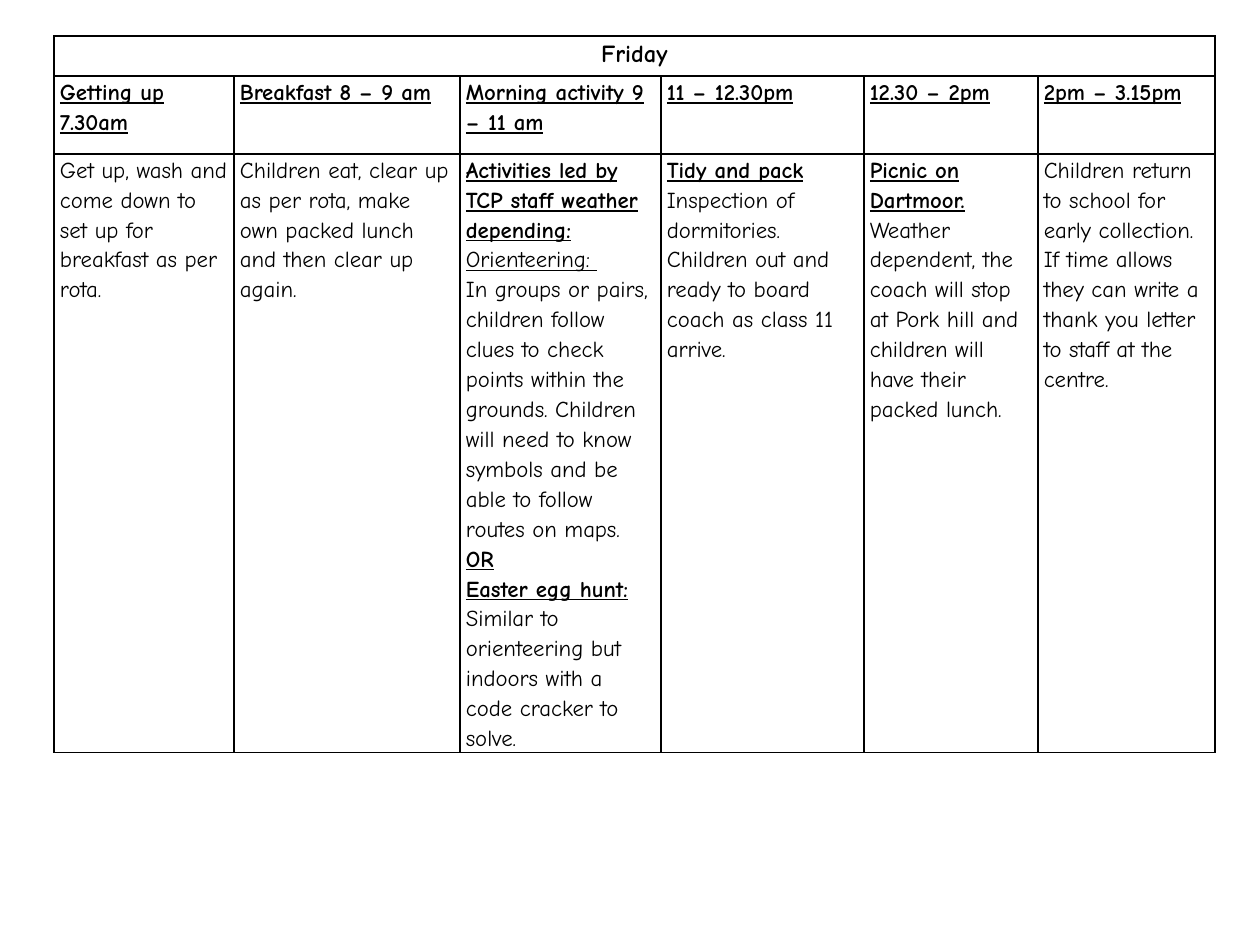
from dataclasses import dataclass

import lxml.etree
import pptx
import pptx.dml.color
import pptx.enum.text
import pptx.oxml.ns
import pptx.util

PX = 914400 / 126  # EMU per px


@dataclass(frozen=True)
class Theme:
    font: str = "Comic Neue"
    ink: str = "000000"
    paper: str = "FFFFFF"
    day_size: int = 14
    text_size: int = 13
    spacing: float = 1.15
    border: int = 12700


THEME = Theme()

# Paragraph styles: (bold, underline)
PLAIN, HEADING, LINED, DAY = (False, False), (True, True), (False, True), (True, False)

COLUMN_WIDTHS = [180, 226, 201, 203, 174, 177]
ROW_HEIGHTS = [40, 78, 594]

# One entry per column: time slot, then styled paragraphs
SCHEDULE = [
    ("Getting up 7.30am", [
        ("Get up, wash and come down to set up for breakfast as per rota.", PLAIN)]),
    ("Breakfast 8 – 9 am", [
        ("Children eat, clear up as per rota, make own packed lunch and then "
         "clear up again.", PLAIN)]),
    ("Morning activity 9 – 11 am", [
        ("Activities led by TCP staff weather depending:", HEADING),
        ("Orienteering: ", LINED),
        ("In groups or pairs, children follow clues to check points within the "
         "grounds. Children will need to know symbols and be able to follow "
         "routes on maps.", PLAIN),
        ("OR", HEADING),
        ("Easter egg hunt:", HEADING),
        ("Similar to orienteering but indoors with a code cracker to solve.", PLAIN)]),
    ("11 – 12.30pm", [
        ("Tidy and pack", HEADING),
        ("Inspection of dormitories.", PLAIN),
        ("Children out and ready to board coach as class 11 arrive.", PLAIN)]),
    ("12.30 – 2pm", [
        ("Picnic on Dartmoor.", HEADING),
        ("Weather dependent, the coach will stop at Pork hill and children will "
         "have their packed lunch.", PLAIN)]),
    ("2pm – 3.15pm", [
        ("Children return to school for early collection. If time allows they "
         "can write a thank you letter to staff at the centre.", PLAIN)]),
]


def px(n):
    return pptx.util.Emu(round(n * PX))


def color(value):
    return pptx.dml.color.RGBColor.from_string(value)


def set_borders(cell):
    tc_pr = cell._tc.get_or_add_tcPr()
    qn = pptx.oxml.ns.qn
    for side in ("a:lnL", "a:lnR", "a:lnT", "a:lnB"):
        ln = lxml.etree.SubElement(tc_pr, qn(side), w=str(THEME.border))
        fill = lxml.etree.SubElement(ln, qn("a:solidFill"))
        lxml.etree.SubElement(fill, qn("a:srgbClr"), val=THEME.ink)


def format_cell(cell):
    set_borders(cell)
    cell.fill.solid()
    cell.fill.fore_color.rgb = color(THEME.paper)
    cell.margin_left = cell.margin_right = px(6)
    cell.margin_top = cell.margin_bottom = 0


def write_cell(cell, paragraphs, size=THEME.text_size, align=None):
    tf = cell.text_frame
    for i, (text, (bold, underline)) in enumerate(paragraphs):
        p = tf.add_paragraph() if i else tf.paragraphs[0]
        p.text = text
        p.line_spacing = THEME.spacing
        p.alignment = align
        p.font.name = THEME.font
        p.font.size = pptx.util.Pt(size)
        p.font.bold = bold
        p.font.underline = underline
        p.font.color.rgb = color(THEME.ink)


def add_grid(s, left, top):
    frame = s.shapes.add_table(len(ROW_HEIGHTS), len(COLUMN_WIDTHS), px(left), px(top),
                               px(sum(COLUMN_WIDTHS)), px(sum(ROW_HEIGHTS)))
    table = frame.table
    table.first_row = table.horz_banding = False
    for column, width in zip(table.columns, COLUMN_WIDTHS):
        column.width = px(width)
    for row, height in zip(table.rows, ROW_HEIGHTS):
        row.height = px(height)
    for cell in table.iter_cells():
        format_cell(cell)
    return table


def main():
    prs = pptx.Presentation()
    prs.slide_width, prs.slide_height = px(1260), px(945)
    s = prs.slides.add_slide(prs.slide_layouts[6])
    table = add_grid(s, 54, 36)

    # Day across the full width
    day = table.cell(0, 0)
    day.merge(table.cell(0, len(COLUMN_WIDTHS) - 1))
    write_cell(day, [("Friday", DAY)], THEME.day_size, pptx.enum.text.PP_ALIGN.CENTER)

    # Time slots and what happens in them
    for col, (slot, paragraphs) in enumerate(SCHEDULE):
        write_cell(table.cell(1, col), [(slot, HEADING)])
        write_cell(table.cell(2, col), paragraphs)

    prs.save("out.pptx")


if __name__ == "__main__":
    main()
